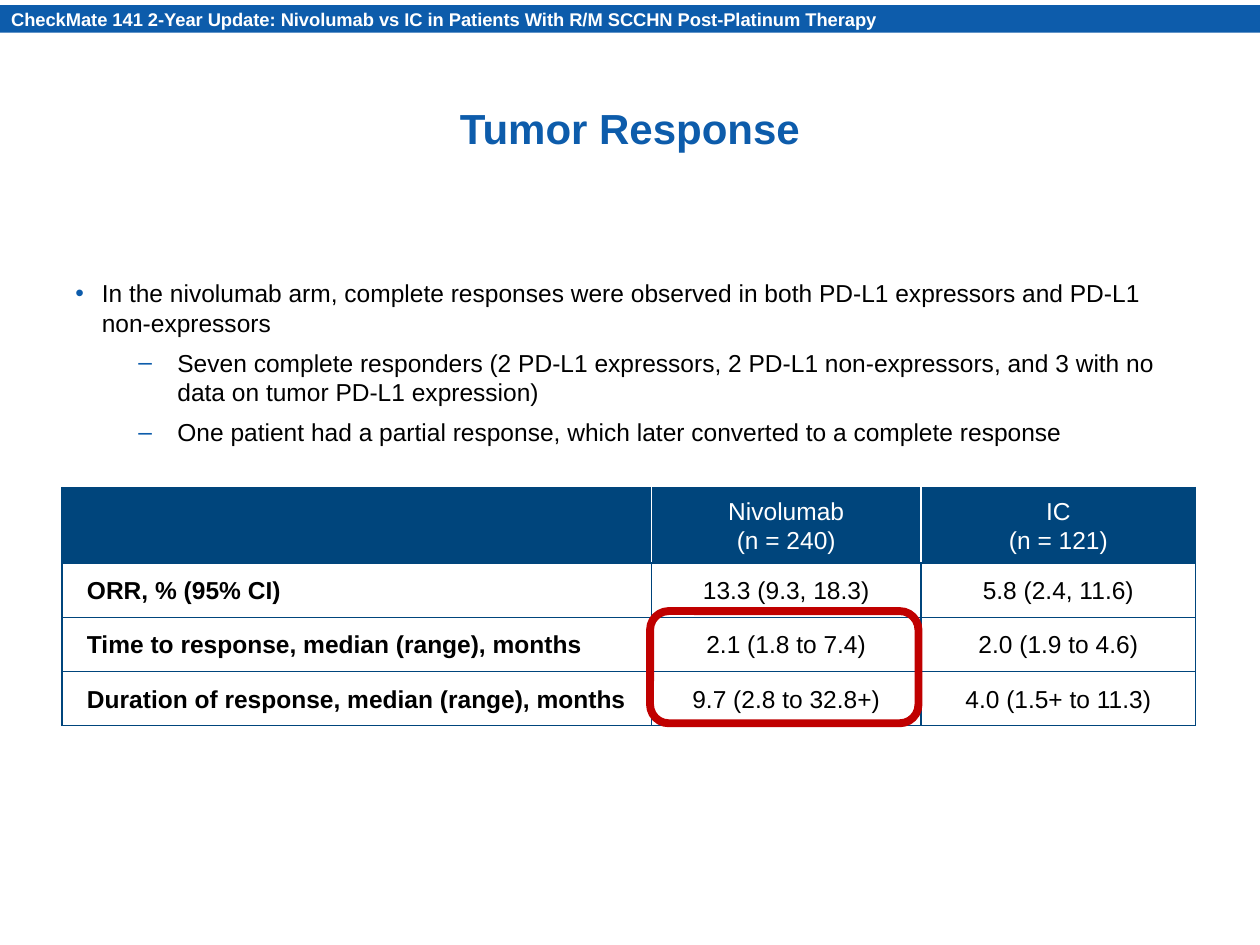
from lxml.etree import SubElement
from pptx import Presentation
from pptx.dml.color import RGBColor
from pptx.enum.shapes import MSO_SHAPE
from pptx.enum.text import MSO_ANCHOR, PP_ALIGN
from pptx.oxml.ns import qn
from pptx.util import Inches, Pt

COLORS = {"blue": "0D5CAB", "navy": "00457C", "red": "C00000",
          "white": "FFFFFF", "black": "000000"}
FONT = "Arial"
BANNER = ("CheckMate 141 2-Year Update: Nivolumab vs IC in Patients "
          "With R/M SCCHN Post-Platinum Therapy")
POINTS = [
    (0, "In the nivolumab arm, complete responses were observed in both "
        "PD-L1 expressors and PD-L1 non-expressors"),
    (1, "Seven complete responders (2 PD-L1 expressors, 2 PD-L1 "
        "non-expressors, and 3 with no data on tumor PD-L1 expression)"),
    (1, "One patient had a partial response, which later converted to a "
        "complete response"),
]
LEVELS = [("•", 0.21, -0.21), ("–", 0.81, -0.31)]  # mark, margin, indent
ROWS = [
    ("", "Nivolumab\v(n = 240)", "IC\v(n = 121)"),
    ("ORR, % (95% CI)", "13.3 (9.3, 18.3)", "5.8 (2.4, 11.6)"),
    ("Time to response, median (range), months",
     "2.1 (1.8 to 7.4)", "2.0 (1.9 to 4.6)"),
    ("Duration of response, median (range), months",
     "9.7 (2.8 to 32.8+)", "4.0 (1.5+ to 11.3)"),
]
WIDTHS = [4.68, 2.14, 2.18]
HEIGHTS = [0.57, 0.43, 0.43, 0.43]


def rgb(name):
    return RGBColor.from_string(COLORS[name])


def inches(box):
    return [Inches(n) for n in box]


def write(para, text, size=14, color="black", bold=False, align=PP_ALIGN.LEFT,
          space=None):
    para.text = text
    para.alignment = align
    para.line_spacing = space
    for run in para.runs:
        font = run.font
        font.name, font.size, font.bold = FONT, Pt(size), bold
        font.color.rgb = rgb(color)
    for gap in para._p.findall(qn("a:br")):
        SubElement(gap, qn("a:rPr"), sz=str(size * 100))


def set_frame(item, pads, anchor):
    """Set the insets (left, top, right, bottom) and anchor of a box or cell."""
    (item.margin_left, item.margin_top,
     item.margin_right, item.margin_bottom) = inches(pads)
    item.vertical_anchor = anchor


def add_banner(slide, box):
    bar = slide.shapes.add_shape(MSO_SHAPE.RECTANGLE, *inches(box))
    bar.shadow.inherit = False
    bar.fill.solid()
    bar.fill.fore_color.rgb = rgb("blue")
    bar.line.fill.background()
    frame = bar.text_frame
    frame.word_wrap = True
    set_frame(frame, (0.1, 0.02, 0.05, 0.02), MSO_ANCHOR.MIDDLE)
    write(frame.paragraphs[0], BANNER, size=10.5, color="white", bold=True)


def add_title(slide, box):
    frame = slide.shapes.add_textbox(*inches(box)).text_frame
    frame.word_wrap = True
    set_frame(frame, [0.05] * 4, MSO_ANCHOR.BOTTOM)
    write(frame.paragraphs[0], "Tumor Response", size=24, color="blue",
          bold=True, align=PP_ALIGN.CENTER, space=0.9)


def add_bullet(para, level):
    mark, margin, indent = LEVELS[level]
    para.level = level
    para.space_after = Pt(6)
    props = para._p.get_or_add_pPr()
    props.set("marL", str(Inches(margin)))
    props.set("indent", str(Inches(indent)))
    tint = SubElement(props, qn("a:buClr"))
    SubElement(tint, qn("a:srgbClr"), val=COLORS["blue"])
    SubElement(props, qn("a:buFont"), typeface=FONT)
    SubElement(props, qn("a:buChar"), char=mark)


def add_points(slide, box):
    frame = slide.shapes.add_textbox(*inches(box)).text_frame
    frame.word_wrap = True
    for i, (level, text) in enumerate(POINTS):
        para = frame.add_paragraph() if i else frame.paragraphs[0]
        write(para, text)
        add_bullet(para, level)


def set_borders(cell, inner):
    """Rule all four sides in navy, or in white on the sides named in inner."""
    props = cell._tc.get_or_add_tcPr()
    for n, side in enumerate("LRTB"):
        line = SubElement(props, qn(f"a:ln{side}"), w=str(Pt(1)))
        props.insert(n, line)
        fill = SubElement(line, qn("a:solidFill"))
        tint = "white" if side in inner else "navy"
        SubElement(fill, qn("a:srgbClr"), val=COLORS[tint])


def add_grid(slide, box):
    table = slide.shapes.add_table(len(ROWS), len(WIDTHS), *inches(box)).table
    for column, width in zip(table.columns, WIDTHS):
        column.width = Inches(width)
    for row, height in zip(table.rows, HEIGHTS):
        row.height = Inches(height)
    for r, texts in enumerate(ROWS):
        head = r == 0
        for c, text in enumerate(texts):
            cell = table.cell(r, c)
            cell.fill.solid()
            cell.fill.fore_color.rgb = rgb("navy" if head else "white")
            set_borders(cell, ("R", "LR", "L")[c] if head else "")
            set_frame(cell, (0.2, 0.05, 0.2, 0.05), MSO_ANCHOR.MIDDLE)
            if text:
                write(cell.text_frame.paragraphs[0], text,
                      color="white" if head else "black", bold=c == 0,
                      align=PP_ALIGN.CENTER if c else PP_ALIGN.LEFT,
                      space=1.07)


def add_ring(slide, box):
    ring = slide.shapes.add_shape(MSO_SHAPE.ROUNDED_RECTANGLE, *inches(box))
    ring.shadow.inherit = False
    ring.fill.background()
    ring.line.color.rgb = rgb("red")
    ring.line.width = Pt(4.5)


def main():
    deck = Presentation()
    deck.slide_width, deck.slide_height = Inches(10), Inches(7.5)
    slide = deck.slides.add_slide(deck.slide_layouts[6])
    add_banner(slide, (-0.01, 0.04, 10.01, 0.22))
    add_title(slide, (0.5, 0.18, 9, 1.09))
    add_points(slide, (0.5, 2.16, 9, 1.59))
    add_grid(slide, (0.49, 3.87, sum(WIDTHS), sum(HEIGHTS)))
    add_ring(slide, (5.16, 4.85, 2.13, 0.89))
    deck.save("out.pptx")


if __name__ == "__main__":
    main()
